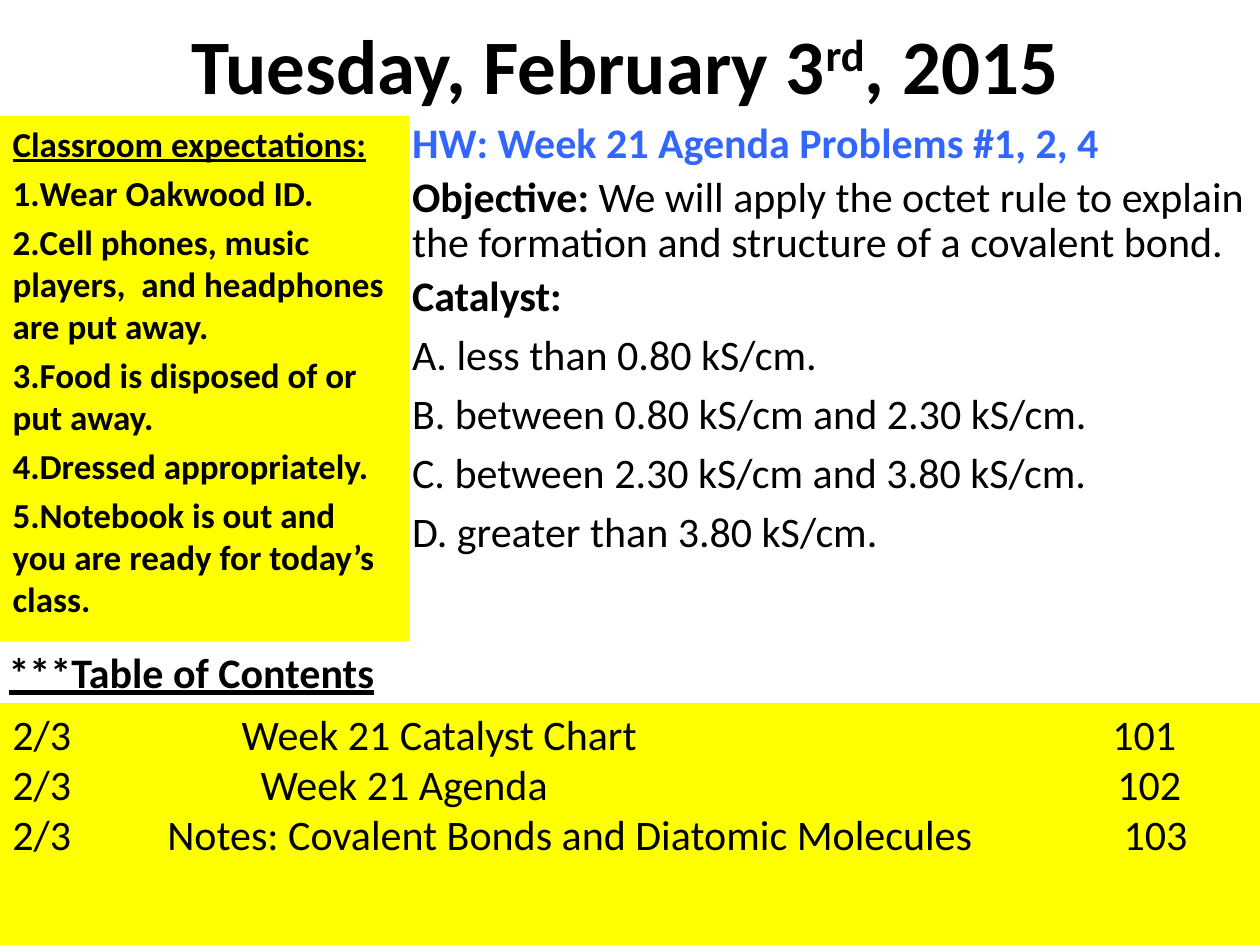
"""Build a class agenda slide with expectations, catalyst and contents."""
from dataclasses import dataclass

from lxml import etree
from pptx import Presentation
from pptx.dml.color import RGBColor
from pptx.enum.shapes import MSO_SHAPE
from pptx.enum.text import MSO_ANCHOR, MSO_AUTO_SIZE, PP_ALIGN
from pptx.oxml.ns import qn
from pptx.util import Inches, Pt

RECT = MSO_SHAPE.RECTANGLE
TOP, BOTTOM = MSO_ANCHOR.TOP, MSO_ANCHOR.BOTTOM
LEFT, CENTER = PP_ALIGN.LEFT, PP_ALIGN.CENTER
FIXED = MSO_AUTO_SIZE.NONE


@dataclass
class Theme:
    font: str = "Calibri"
    ink: RGBColor = RGBColor(0, 0, 0)
    blue: RGBColor = RGBColor(0x33, 0x66, 0xFF)
    yellow: RGBColor = RGBColor(0xFF, 0xFF, 0)
    head: int = 44
    text: int = 24
    rule: int = 20


theme = Theme()


def setup(shape, left, top, width, height, anchor=TOP, wrap=True):
    shape.left, shape.top = Inches(left), Inches(top)
    shape.width, shape.height = Inches(width), Inches(height)
    frame = shape.text_frame
    frame.auto_size = FIXED
    frame.word_wrap = wrap
    frame.vertical_anchor = anchor
    return frame


def add_run(para, text, size, bold=False, color=theme.ink, line=False):
    run = para.add_run()
    run.text = text
    font = run.font
    font.name, font.size = theme.font, Pt(size)
    font.bold, font.underline = bold, line
    font.color.rgb = color
    return run


deck = Presentation()
deck.slide_width, deck.slide_height = Inches(10), Inches(7.5)
slide = deck.slides.add_slide(deck.slide_layouts[3])
title, body, rules = list(slide.placeholders)[:3]

frame = setup(title, 0.5, 0, 8.92, 0.92, BOTTOM)
para = frame.paragraphs[0]
para.alignment = CENTER
add_run(para, "Tuesday, February 3", theme.head, True)
raised = add_run(para, "rd", theme.head, True)
raised.font._element.set("baseline", "30000")
add_run(para, ", 2015", theme.head, True)

lesson = [
    (0.9, [("HW: Week 21 Agenda Problems #1, 2, 4", True, theme.blue)]),
    (0.9, [("Objective: ", True, theme.ink),
           ("We will apply the octet rule to explain the formation and "
            "structure of a covalent bond.", False, theme.ink)]),
    (0.9, [("Catalyst:", True, theme.ink)]),
    (1.0, [("A. less than 0.80 kS/cm.", False, theme.ink)]),
    (1.0, [("B. between 0.80 kS/cm and 2.30 kS/cm.", False, theme.ink)]),
    (1.0, [("C. between 2.30 kS/cm and 3.80 kS/cm.", False, theme.ink)]),
    (1.0, [("D. greater than 3.80 kS/cm.", False, theme.ink)]),
]
frame = setup(body, 3.17, 0.92, 6.83, 5.25)
for i, (space, parts) in enumerate(lesson):
    para = frame.add_paragraph() if i else frame.paragraphs[0]
    para.line_spacing = space
    para.space_before = Pt(theme.text * 0.2)
    props = para._p.get_or_add_pPr()
    props.set("marL", "0")
    props.set("indent", "0")
    etree.SubElement(props, qn("a:buNone"))
    for text, bold, color in parts:
        add_run(para, text, theme.text, bold, color)

habits = [
    "Classroom expectations:",
    "Wear Oakwood ID.",
    "Cell phones, music players,  and headphones are put away.",
    "Food is disposed of or put away.",
    "Dressed appropriately.",
    "Notebook is out and you are ready for today’s class.",
]
frame = setup(rules, 0, 0.92, 3.25, 4.17)
rules.fill.solid()
rules.fill.fore_color.rgb = theme.yellow
for i, text in enumerate(habits):
    para = frame.add_paragraph() if i else frame.paragraphs[0]
    para.space_before = Pt(theme.rule * 0.2)
    props = para._p.get_or_add_pPr()
    props.set("marL", "0")
    props.set("indent", "0")
    if i:
        etree.SubElement(props, qn("a:buFont"), typeface="+mj-lt")
        etree.SubElement(props, qn("a:buAutoNum"), type="arabicPeriod")
    else:
        etree.SubElement(props, qn("a:buNone"))
    add_run(para, text, theme.rule, True, line=not i)

pages = [
    ("2/3", "Week 21 Catalyst Chart", "101", 1.82, 8.73),
    ("2/3", "Week 21 Agenda", "102", 1.97, 8.77),
    ("2/3", "Notes: Covalent Bonds and Diatomic Molecules", "103", 1.23, 8.82),
]
panel = slide.shapes.add_shape(RECT, 0, 0, 0, 0)
panel.shadow.inherit = False
panel.fill.solid()
panel.fill.fore_color.rgb = theme.yellow
panel.line.fill.background()
frame = setup(panel, 0, 5.58, 10, 1.92)
frame.margin_top = Inches(0.04)
for i, (day, topic, page, *stops) in enumerate(pages):
    para = frame.add_paragraph() if i else frame.paragraphs[0]
    para.alignment = LEFT
    tabs = etree.SubElement(para._p.get_or_add_pPr(), qn("a:tabLst"))
    for stop in stops:
        etree.SubElement(tabs, qn("a:tab"), pos=str(Inches(stop)), algn="l")
    add_run(para, f"{day}\t{topic}\t{page}", theme.text)

label = slide.shapes.add_textbox(0, 0, 0, 0)
frame = setup(label, -0.03, 5.08, 3.17, 0.51, wrap=False)
add_run(frame.paragraphs[0], "***Table of Contents", theme.text, True, line=True)

deck.save("out.pptx")
